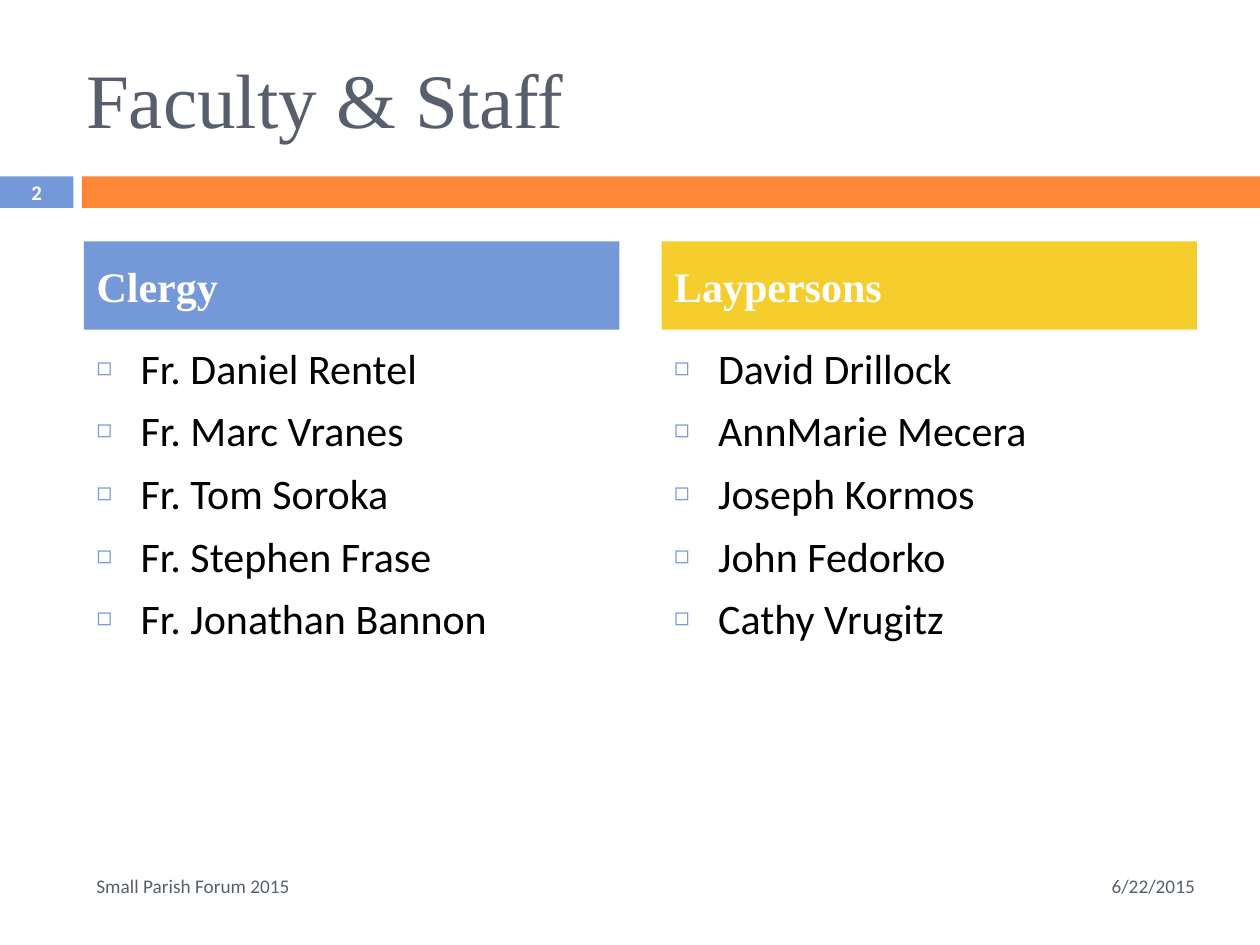
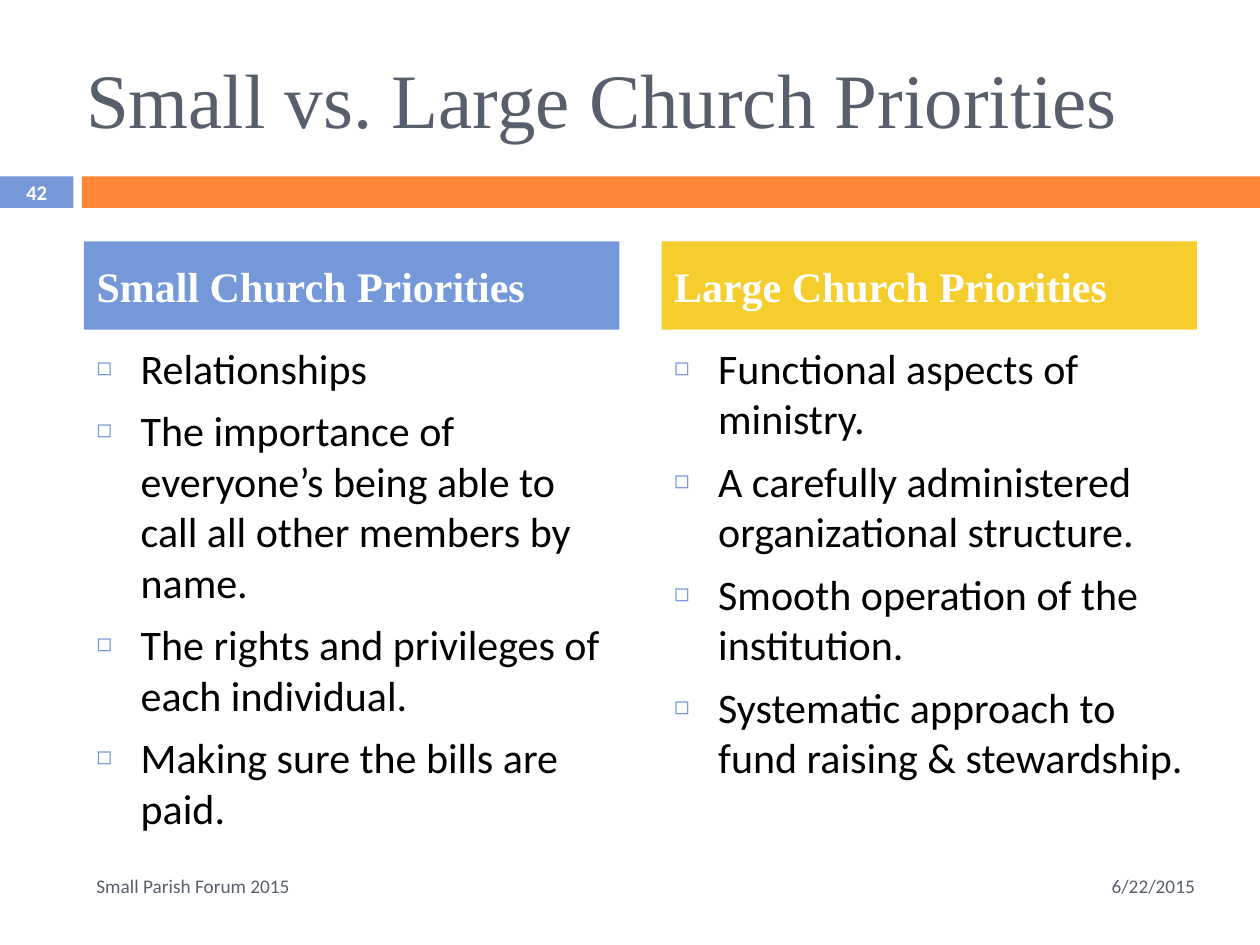
from typing import NamedTuple, Sequence

from lxml import etree
from pptx import Presentation
from pptx import util as u
from pptx.dml.color import RGBColor
from pptx.enum import shapes, text
from pptx.oxml import ns

CELLS_PER_INCH = 12
SERIF, SANS = "Times New Roman", "Calibri"
SLATE, BLUE, ORANGE, YELLOW = "575F6D", "7598D9", "FE8637", "F5CD2D"
WHITE, BLACK = "FFFFFF", "000000"
FOOTER, DATE = "Small Parish Forum 2015", "6/22/2015"
COMPARISON_LAYOUT = 4
BULLET_INDENT = 4.2


class Area(NamedTuple):
    column: float
    row: float
    columns: float
    rows: float


class Topic(NamedTuple):
    heading: str
    items: Sequence[str]


class Comparison(NamedTuple):
    title: str
    number: int
    topics: Sequence[Topic]


TITLE_AREA = Area(7, 3.6, 107, 11.4)
NUMBER_AREA = Area(0, 16.7, 7, 3.2)
FOOTER_AREA = Area(8, 82, 71.2, 4.8)
DATE_AREA = Area(80, 82, 35, 4.8)
BANDS = ((Area(0, 16.8, 7, 3), BLUE), (Area(7.8, 16.8, 112.2, 3), ORANGE))
TOPIC_LEFT, TOPIC_WIDTH, TOPIC_GAP = 8, 51, 4
HEADING_COLORS = (BLUE, YELLOW)

COMPARISONS = (
    Comparison("Faculty & Staff", 2, (
        Topic("Clergy", (
            "Fr. Daniel Rentel",
            "Fr. Marc Vranes",
            "Fr. Tom Soroka",
            "Fr. Stephen Frase",
            "Fr. Jonathan Bannon",
        )),
        Topic("Laypersons", (
            "David Drillock",
            "AnnMarie Mecera",
            "Joseph Kormos",
            "John Fedorko",
            "Cathy Vrugitz",
        )),
    )),
    Comparison("Small vs. Large Church Priorities", 42, (
        Topic("Small Church Priorities", (
            "Relationships",
            "The importance of everyone’s being able to call all other members by name.",
            "The rights and privileges of each individual.",
            "Making sure the bills are paid.",
        )),
        Topic("Large Church Priorities", (
            "Functional aspects of ministry.",
            "A carefully administered organizational structure.",
            "Smooth operation of the institution.",
            "Systematic approach to fund raising & stewardship.",
        )),
    )),
)


def cells(count: float) -> u.Emu:
    return u.Inches(count / CELLS_PER_INCH)


def color(value: str) -> RGBColor:
    return RGBColor.from_string(value)


def place(box, area: Area) -> None:
    box.left, box.top, box.width, box.height = map(cells, area)


def paint(box, fill: str) -> None:
    box.fill.solid()
    box.fill.fore_color.rgb = color(fill)


def add_bullet(para) -> None:
    properties = para._p.get_or_add_pPr()
    indent = cells(BULLET_INDENT)
    properties.set("marL", str(indent))
    properties.set("indent", str(-indent))
    tint = etree.SubElement(properties, ns.qn("a:buClr"))
    etree.SubElement(tint, ns.qn("a:srgbClr"), val=BLUE)
    etree.SubElement(properties, ns.qn("a:buSzPct"), val="60000")
    etree.SubElement(properties, ns.qn("a:buChar"), char="◻")


def write(box, *lines: str, size: float, ink: str, font: str = SANS,
          bold: bool = False, align=text.PP_ALIGN.LEFT,
          anchor=text.MSO_ANCHOR.MIDDLE, before: float = 0,
          bullets: bool = False) -> None:
    frame = box.text_frame
    frame.word_wrap = True
    frame.auto_size = text.MSO_AUTO_SIZE.NONE
    frame.vertical_anchor = anchor
    for index, line in enumerate(lines):
        para = frame.add_paragraph() if index else frame.paragraphs[0]
        para.alignment = align
        para.space_before = u.Pt(before)
        if bullets:
            add_bullet(para)
        span = para.add_run()
        span.text = line
        span.font.name = font
        span.font.size = u.Pt(size)
        span.font.bold = bold
        span.font.color.rgb = color(ink)


def add_band(page, area: Area, fill: str) -> None:
    band = page.shapes.add_shape(shapes.MSO_SHAPE.RECTANGLE, *map(cells, area))
    band.shadow.inherit = False
    band.line.fill.background()
    paint(band, fill)


def add_label(page, area: Area, label: str, **style) -> None:
    box = page.shapes.add_textbox(*map(cells, area))
    write(box, label, **style)


def fill_topic(page, index: int, topic: Topic) -> None:
    left = TOPIC_LEFT + index * (TOPIC_WIDTH + TOPIC_GAP)
    heading = page.placeholders[1 + 2 * index]
    place(heading, Area(left, 23, TOPIC_WIDTH, 8.4))
    paint(heading, HEADING_COLORS[index])
    write(heading, topic.heading, size=24, ink=WHITE, font=SERIF, bold=True, before=7)
    body = page.placeholders[2 + 2 * index]
    place(body, Area(left, 32, TOPIC_WIDTH, 47))
    write(body, *topic.items, size=24, ink=BLACK, anchor=text.MSO_ANCHOR.TOP,
          before=7, bullets=True)


def add_comparison(deck, comparison: Comparison) -> None:
    page = deck.slides.add_slide(deck.slide_layouts[COMPARISON_LAYOUT])
    for area, fill in BANDS:
        add_band(page, area, fill)
    title = page.shapes.title
    place(title, TITLE_AREA)
    write(title, comparison.title, size=44, ink=SLATE, font=SERIF)
    for index, topic in enumerate(comparison.topics):
        fill_topic(page, index, topic)
    add_label(page, NUMBER_AREA, str(comparison.number), size=11.9, ink=WHITE,
              bold=True, align=text.PP_ALIGN.CENTER)
    add_label(page, FOOTER_AREA, FOOTER, size=11, ink=SLATE)
    add_label(page, DATE_AREA, DATE, size=11, ink=SLATE, align=text.PP_ALIGN.RIGHT)


def main() -> None:
    deck = Presentation()
    deck.slide_width, deck.slide_height = cells(120), cells(90)
    for comparison in COMPARISONS:
        add_comparison(deck, comparison)
    deck.save("out.pptx")


if __name__ == "__main__":
    main()
